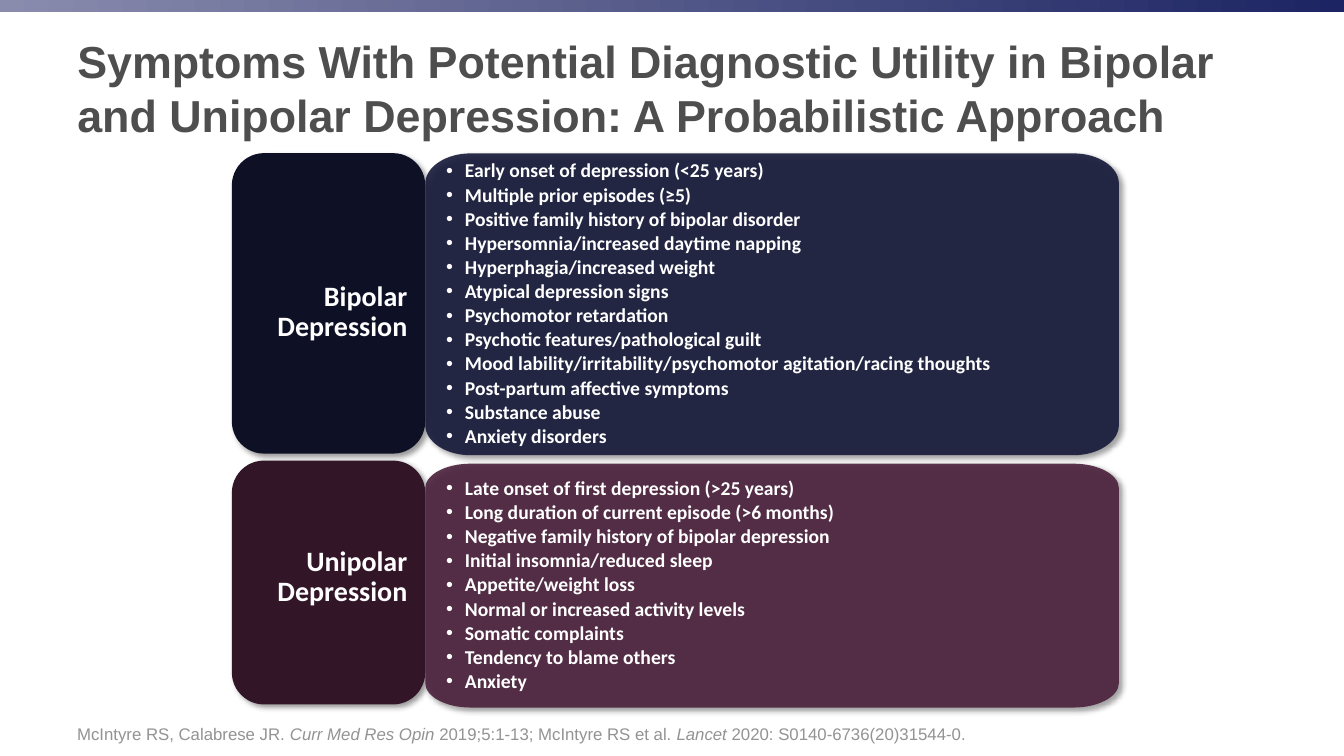
"""Build a slide comparing symptoms of bipolar and unipolar depression."""
from dataclasses import dataclass

from lxml import etree
from pptx import Presentation
from pptx.dml.color import RGBColor
from pptx.enum.shapes import MSO_SHAPE
from pptx.enum.text import MSO_ANCHOR, MSO_AUTO_SIZE, PP_ALIGN
from pptx.oxml.ns import qn
from pptx.shapes.autoshape import Shape
from pptx.slide import Slide
from pptx.text.text import TextFrame, _Paragraph as Paragraph
from pptx.util import Pt

RECTANGLE = MSO_SHAPE.RECTANGLE
ROUNDED = MSO_SHAPE.ROUNDED_RECTANGLE
LEFT, RIGHT = PP_ALIGN.LEFT, PP_ALIGN.RIGHT
MIDDLE, BOTTOM = MSO_ANCHOR.MIDDLE, MSO_ANCHOR.BOTTOM
NO_FIT = MSO_AUTO_SIZE.NONE


@dataclass(frozen=True)
class Theme:
    heading_font: str = "Arial"
    body_font: str = "Calibri"
    title_size: float = 32
    label_size: float = 20
    symptom_size: float = 14
    source_size: float = 12
    title: str = "4D4E4D"
    source: str = "939393"
    text: str = "FFFFFF"
    shadow: str = "000000"
    bar_start: str = "898CAD"
    bar_end: str = "1C2463"


@dataclass(frozen=True)
class Frame:
    left: float
    top: float
    width: float
    height: float

    def lengths(self) -> tuple[Pt, Pt, Pt, Pt]:
        return Pt(self.left), Pt(self.top), Pt(self.width), Pt(self.height)


@dataclass(frozen=True)
class Group:
    label: str
    label_frame: Frame
    label_color: str
    label_bottom_inset: float
    panel_frame: Frame
    panel_color: str
    symptoms: tuple[str, ...]


THEME = Theme()
PAGE_WIDTH, PAGE_HEIGHT = 960, 540
ARC_PULL = 0.55
TITLE = ("Symptoms With Potential Diagnostic Utility in Bipolar and Unipolar "
         "Depression: A Probabilistic Approach")
SOURCE = (
    ("McIntyre RS, Calabrese JR. ", False),
    ("Curr Med Res Opin ", True),
    ("2019;5:1-13; McIntyre RS et al. ", False),
    ("Lancet ", True),
    ("2020: S0140-6736(20)31544-0.", False),
)
GROUPS = (
    Group(
        "Bipolar\vDepression", Frame(165.6, 109.4, 138.2, 214.6), "0E1126", 25,
        Frame(303.8, 109.6, 495.4, 215.6), "161939",
        (
            "Early onset of depression (<25 years)",
            "Multiple prior episodes (≥5)",
            "Positive family history of bipolar disorder",
            "Hypersomnia/increased daytime napping",
            "Hyperphagia/increased weight",
            "Atypical depression signs",
            "Psychomotor retardation",
            "Psychotic features/pathological guilt",
            "Mood lability/irritability/psychomotor agitation/racing thoughts",
            "Post-partum affective symptoms",
            "Substance abuse",
            "Anxiety disorders",
        ),
    ),
    Group(
        "Unipolar\vDepression", Frame(165.6, 329, 138.2, 174.2), "321628", 45,
        Frame(303.8, 331.2, 495.4, 174.2), "4B213C",
        (
            "Late onset of first depression (>25 years)",
            "Long duration of current episode (>6 months)",
            "Negative family history of bipolar depression",
            "Initial insomnia/reduced sleep",
            "Appetite/weight loss",
            "Normal or increased activity levels",
            "Somatic complaints",
            "Tendency to blame others",
            "Anxiety",
        ),
    ),
)


def format_runs(para: Paragraph, font: str, size: float, color: str, bold: bool) -> None:
    for span in para.runs:
        span.font.name = font
        span.font.size = Pt(size)
        span.font.bold = bold
        span.font.color.rgb = RGBColor.from_string(color)


def set_frame(text: TextFrame, insets: tuple[float, float, float, float],
              anchor: MSO_ANCHOR) -> None:
    text.word_wrap = True
    text.auto_size = NO_FIT
    text.vertical_anchor = anchor
    text.margin_left, text.margin_top, text.margin_right, text.margin_bottom = map(Pt, insets)


def paint(box: Shape, color: str, opacity: int) -> None:
    box.fill.solid()
    box.fill.fore_color.rgb = RGBColor.from_string(color)
    box.line.fill.background()
    box.shadow.inherit = False
    properties = box._element.spPr
    if opacity < 100:
        fill_color = properties.find(qn("a:solidFill"))[0]
        etree.SubElement(fill_color, qn("a:alpha"), val=str(opacity * 1000))
    shadow = etree.SubElement(
        properties.find(qn("a:effectLst")), qn("a:outerShdw"), blurRad=str(Pt(4)),
        dist=str(Pt(3)), dir=str(45 * 60000), algn="tl", rotWithShape="0")
    shade = etree.SubElement(shadow, qn("a:srgbClr"), val=THEME.shadow)
    etree.SubElement(shade, qn("a:alpha"), val="40000")


def add_label(page: Slide, group: Group) -> None:
    box = page.shapes.add_shape(ROUNDED, *group.label_frame.lengths())
    paint(box, group.label_color, 100)
    set_frame(box.text_frame, (0, 38, 6, group.label_bottom_inset), MIDDLE)
    para = box.text_frame.paragraphs[0]
    para.text = group.label
    para.alignment = RIGHT
    para.line_spacing = 0.9
    format_runs(para, THEME.body_font, THEME.label_size, THEME.text, True)


def add_outline(page: Slide, frame: Frame) -> Shape:
    """Draw a rectangle whose corners are elliptical curves."""
    left, top, width, height = frame.lengths()
    right, bottom = left + width, top + height
    reach_x, reach_y = Pt(32.4), height // 10
    builder = page.shapes.build_freeform(left, top + reach_y)
    builder.add_line_segments((
        (left + reach_x, top), (right - reach_x, top),
        (right, top + reach_y), (right, bottom - reach_y),
        (right - reach_x, bottom), (left + reach_x, bottom),
        (left, bottom - reach_y), (left, top + reach_y)))
    box = builder.convert_to_shape()
    corners = ((0, 0), (width, 0), (width, height), (0, height))
    points = list(box._element.iter(qn("a:pt")))
    for corner, start, end in zip(corners, points[0::2], points[1::2]):
        curve = etree.Element(qn("a:cubicBezTo"))
        for point in (start, end):
            x, y = int(point.get("x")), int(point.get("y"))
            etree.SubElement(curve, qn("a:pt"),
                             x=str(round(x + ARC_PULL * (corner[0] - x))),
                             y=str(round(y + ARC_PULL * (corner[1] - y))))
        line = end.getparent()
        line.getparent().replace(line, curve)
        curve.append(end)
    return box


def add_panel(page: Slide, group: Group) -> None:
    box = add_outline(page, group.panel_frame)
    paint(box, group.panel_color, 90)
    set_frame(box.text_frame, (14.8, 1.4, 14.4, 1.4), MIDDLE)
    box.text_frame.text = "\n".join(group.symptoms)
    for para in box.text_frame.paragraphs:
        para.level = 1
        para.alignment = LEFT
        para.line_spacing = 0.9
        para.space_after = Pt(2.1)
        format_runs(para, THEME.body_font, THEME.symptom_size, THEME.text, True)
        properties = para._p.get_or_add_pPr()
        properties.set("marL", str(Pt(13.5)))
        properties.set("indent", str(-Pt(13.5)))
        etree.SubElement(properties, qn("a:buFont"), typeface=THEME.heading_font)
        etree.SubElement(properties, qn("a:buChar"), char="•")


def add_bar(page: Slide) -> None:
    bar = page.shapes.add_shape(RECTANGLE, *Frame(0, 0, PAGE_WIDTH, 8.6).lengths())
    bar.shadow.inherit = False
    bar.line.fill.background()
    bar.fill.gradient()
    bar.fill.gradient_angle = 0
    for stop, color in zip(bar.fill.gradient_stops, (THEME.bar_start, THEME.bar_end)):
        stop.color.rgb = RGBColor.from_string(color)


def set_title(page: Slide) -> None:
    title = page.shapes.title
    title.left, title.top, title.width, title.height = Frame(48, 15.8, 846, 93.6).lengths()
    set_frame(title.text_frame, (7.2, 3.6, 7.2, 3.6), MIDDLE)
    title.text_frame.text = TITLE
    para = title.text_frame.paragraphs[0]
    para.alignment = LEFT
    format_runs(para, THEME.heading_font, THEME.title_size, THEME.title, True)


def add_source(page: Slide) -> None:
    box = page.shapes.add_textbox(*Frame(48, 500.4, 846, 34.6).lengths())
    set_frame(box.text_frame, (7.2, 3.6, 7.2, 3.6), BOTTOM)
    para = box.text_frame.paragraphs[0]
    for words, italic in SOURCE:
        span = para.add_run()
        span.text = words
        span.font.italic = italic
    format_runs(para, THEME.heading_font, THEME.source_size, THEME.source, False)


def main() -> None:
    deck = Presentation()
    deck.slide_width, deck.slide_height = Pt(PAGE_WIDTH), Pt(PAGE_HEIGHT)
    page = deck.slides.add_slide(deck.slide_layouts[5])
    add_bar(page)
    set_title(page)
    for add_part in (add_label, add_panel):
        for group in GROUPS:
            add_part(page, group)
    add_source(page)
    deck.save("out.pptx")


if __name__ == "__main__":
    main()
